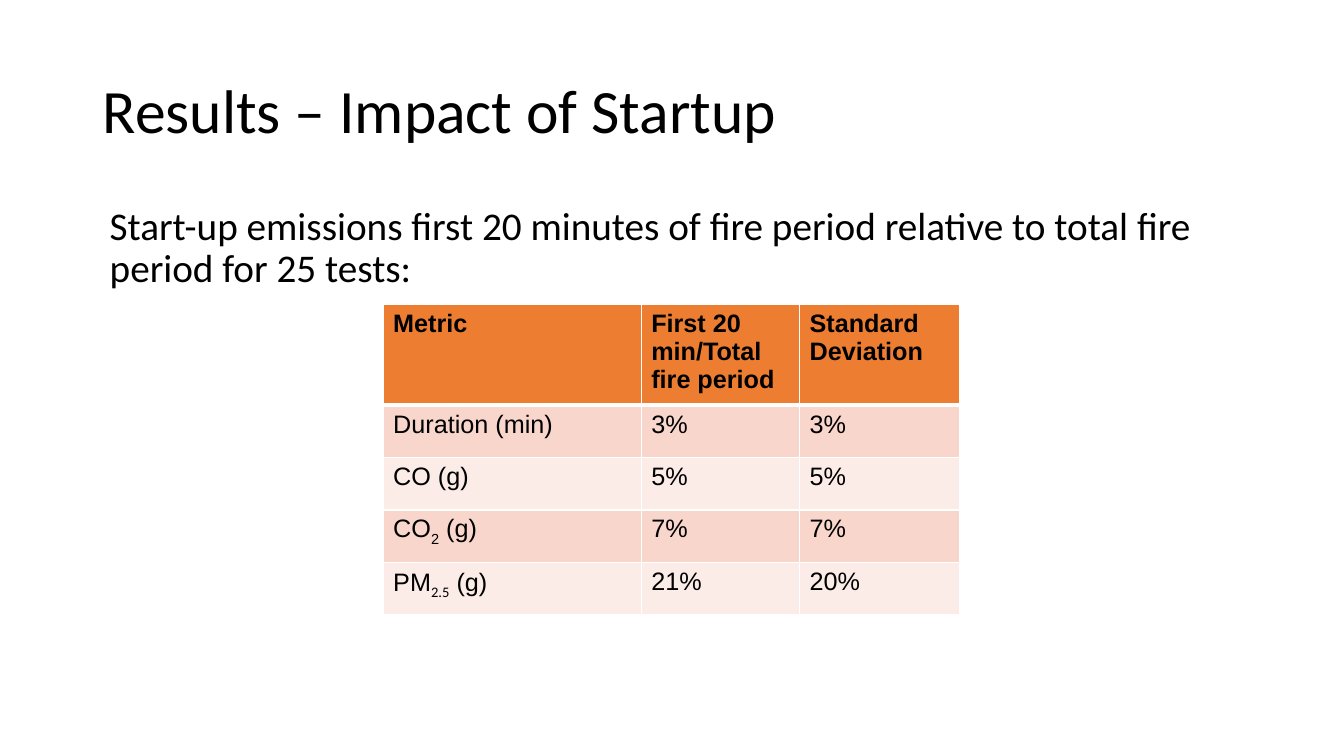
from dataclasses import dataclass

from lxml.etree import SubElement
from pptx import Presentation
from pptx.dml.color import RGBColor
from pptx.enum.text import MSO_ANCHOR as Anchor
from pptx.oxml.ns import qn
from pptx.util import Inches, Pt

COLORS = {
    "text": "000000",
    "header": "ED7D31",
    "odd_row": "F8D6CC",
    "even_row": "FCECE7",
    "border": "FFFFFF",
}


@dataclass(frozen=True)
class TextBlock:
    text: str
    top: float
    height: float
    size: int
    anchor: Anchor
    indent: float = 0


@dataclass(frozen=True)
class Metric:
    name: str
    share: str
    deviation: str
    subscript: str = ""
    unit: str = ""
    subscript_font: str = "Arial"


BLOCKS = [
    TextBlock("Results – Impact of Startup", 0.4, 1.45, 44, Anchor.MIDDLE),
    TextBlock(
        "Start-up emissions first 20 minutes of fire period relative to "
        "total fire period for 25 tests:",
        2, 2.01, 28, Anchor.TOP, 0.07,
    ),
]
METRICS = [
    Metric("Metric", "First 20 min/Total fire period", "Standard Deviation"),
    Metric("Duration (min)", "3%", "3%"),
    Metric("CO (g)", "5%", "5%"),
    Metric("CO", "7%", "7%", "2", " (g)"),
    Metric("PM", "21%", "20%", "2.5", " (g)", "Calibri"),
]
COLUMN_WIDTHS = [2.56, 1.57, 1.59]
HEADER_HEIGHT, ROW_HEIGHT = 0.7, 0.52


def style_font(font, name: str, size: int, bold: bool = False) -> None:
    font.name = name
    font.size = Pt(size)
    font.bold = bold
    font.color.rgb = RGBColor.from_string(COLORS["text"])


def add_text_block(page, block: TextBlock) -> None:
    box = page.shapes.add_textbox(
        Inches(0.92), Inches(block.top), Inches(11.5), Inches(block.height)
    )
    frame = box.text_frame
    frame.word_wrap = True
    frame.vertical_anchor = block.anchor
    para = frame.paragraphs[0]
    para.text = block.text
    para.line_spacing = 0.9
    para._p.get_or_add_pPr().set("marL", str(Inches(block.indent)))
    style_font(para.font, "Calibri", block.size)


def set_borders(cell, widths: dict[str, int]) -> None:
    """Draw cell edges, keeping them before the fill as the schema asks."""
    properties = cell._tc.get_or_add_tcPr()
    for position, (edge, width) in enumerate(widths.items()):
        line = SubElement(properties, qn(f"a:{edge}"), w=str(Pt(width)))
        fill = SubElement(line, qn("a:solidFill"))
        SubElement(fill, qn("a:srgbClr"), val=COLORS["border"])
        properties.insert(position, line)


def add_subscript(para, metric: Metric) -> None:
    span = para.add_run()
    span.text = metric.subscript
    span.font.name = metric.subscript_font
    span._r.get_or_add_rPr().set("baseline", "-25000")
    para.add_run().text = metric.unit


def add_metric_table(page) -> None:
    table = page.shapes.add_table(
        len(METRICS), len(COLUMN_WIDTHS),
        Inches(3.8), Inches(3.02), Inches(5.73), Inches(3.1),
    ).table
    table.first_row = table.horz_banding = False
    for column, width in zip(table.columns, COLUMN_WIDTHS):
        column.width = Inches(width)

    for index, metric in enumerate(METRICS):
        is_header = index == 0
        table.rows[index].height = Inches(HEADER_HEIGHT if is_header else ROW_HEIGHT)
        row_color = "header" if is_header else "odd_row" if index % 2 else "even_row"
        widths = {
            "lnL": 1,
            "lnR": 1,
            "lnT": 3 if index == 1 else 1,
            "lnB": 3 if is_header else 1,
        }
        texts = [metric.name, metric.share, metric.deviation]
        for column, text in enumerate(texts):
            cell = table.cell(index, column)
            cell.fill.solid()
            cell.fill.fore_color.rgb = RGBColor.from_string(COLORS[row_color])
            set_borders(cell, widths)
            para = cell.text_frame.paragraphs[0]
            para.add_run().text = text
            if column == 0 and metric.subscript:
                add_subscript(para, metric)
            style_font(para.font, "Arial", 18, is_header)


def main() -> None:
    deck = Presentation()
    deck.slide_width, deck.slide_height = Inches(13.33), Inches(7.5)
    page = deck.slides.add_slide(deck.slide_layouts[6])
    for block in BLOCKS:
        add_text_block(page, block)
    add_metric_table(page)
    deck.save("out.pptx")


if __name__ == "__main__":
    main()
